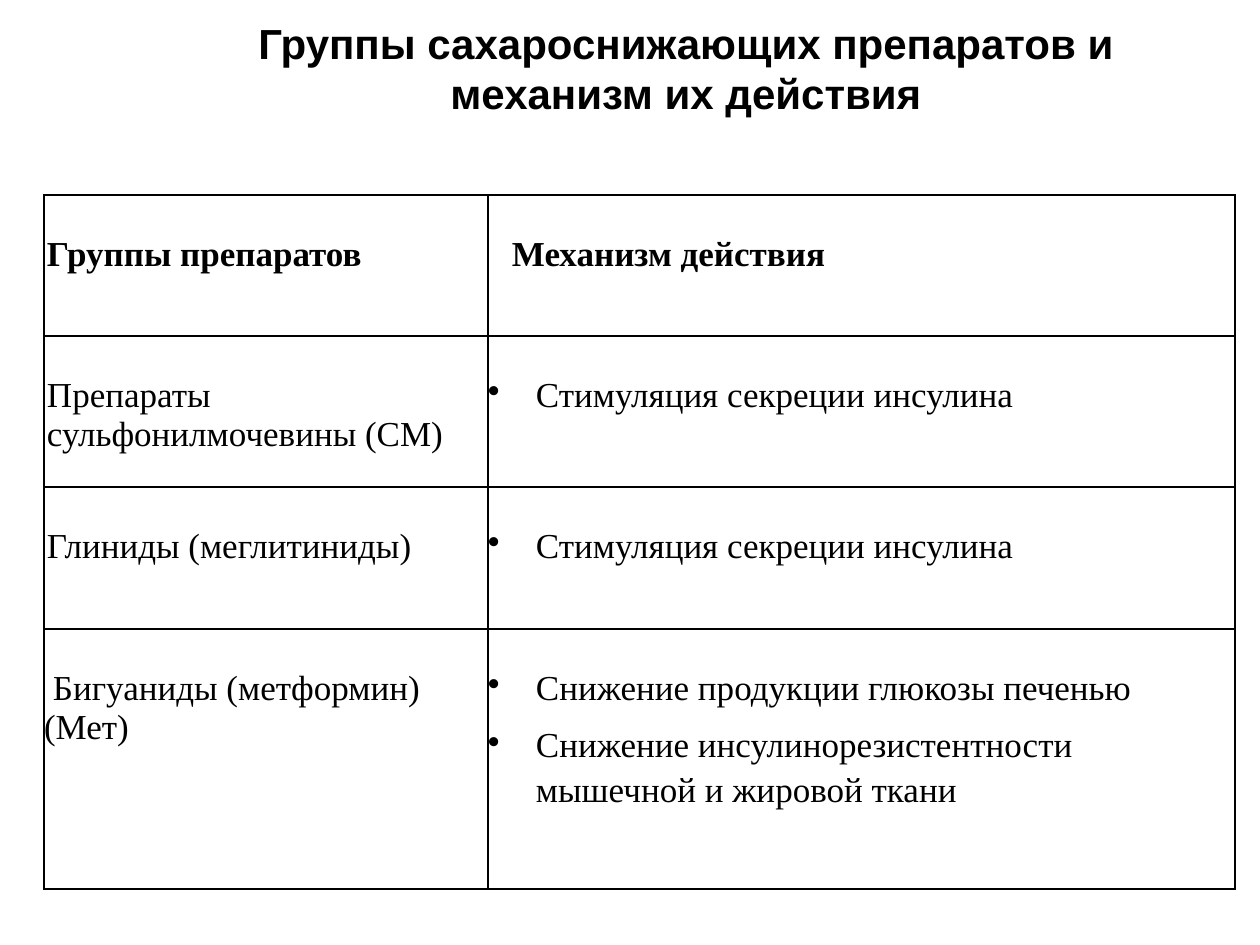
import pptx
import pptx.util
import pptx.dml.color
import pptx.enum.text
import pptx.oxml.ns
import lxml.etree

BLACK = pptx.dml.color.RGBColor(0, 0, 0)
TITLE = "Группы сахароснижающих препаратов и механизм их действия"
HEAD = [("Группы препаратов", 3, 0), ("Механизм действия", 24, 0)]
BODY = [
    ("Препараты сульфонилмочевины (СМ)", 3, 0, ["Стимуляция секреции инсулина"]),
    ("Глиниды (меглитиниды)", 3, 0, ["Стимуляция секреции инсулина"]),
    ("Бигуаниды (метформин)(Мет)", 0, 9, [
        "Снижение продукции глюкозы печенью",
        "Снижение инсулинорезистентности мышечной и жировой ткани",
    ]),
]
COLS = [444, 747]
ROWS = [141, 151, 142, 260]
LEFT, TOP = 44, 195
HANG = 48
GAP = {"line_spacing": 1.15, "space_before": pptx.util.Pt(7.4)}
CELL = {"name": "Times New Roman", "size": pptx.util.Pt(20), "bold": False}
BOLD = {**CELL, "bold": True}
HEADING = {"name": "Arial", "size": pptx.util.Pt(24), "bold": True}


def px(n):
    return round(n * 914400 / 126)


def apply(obj, vals):
    for key, val in vals.items():
        setattr(obj, key, val)


def add(parent, tag, **attrs):
    node = lxml.etree.SubElement(parent, pptx.oxml.ns.qn(tag))
    for key, val in attrs.items():
        node.set(key, str(val))
    return node


def write(para, text, font):
    run = para.add_run()
    run.text = text
    apply(run.font, font)
    run.font.color.rgb = BLACK


def indent(para, left, first):
    props = para._p.get_or_add_pPr()
    props.set("marL", str(px(left)))
    props.set("indent", str(px(first)))
    return props


def frame(cell):
    apply(cell, {"margin_left": 0, "margin_right": 0, "margin_bottom": 0,
                 "margin_top": px(40)})
    props = cell._tc.get_or_add_tcPr()
    for side in "LRTB":
        line = add(props, "a:ln" + side, w=pptx.util.Pt(1))
        add(add(line, "a:solidFill"), "a:srgbClr", val=BLACK)
    cell.fill.background()


def plain(cell, text, left, first, font):
    para = cell.text_frame.paragraphs[0]
    indent(para, left, first)
    write(para, text, font)


def points(cell, items):
    text = cell.text_frame
    for i, item in enumerate(items):
        para = text.add_paragraph() if i else text.paragraphs[0]
        if i:
            apply(para, GAP)
        add(indent(para, HANG, -HANG), "a:buChar", char="•")
        write(para, item, CELL)


def main():
    deck = pptx.Presentation()
    apply(deck, {"slide_width": px(1260), "slide_height": px(945)})
    slide = deck.slides.add_slide(deck.slide_layouts[6])

    shape = slide.shapes.add_table(len(ROWS), len(COLS), px(LEFT), px(TOP),
                                   px(sum(COLS)), px(sum(ROWS)))
    table = shape.table
    apply(table, {"first_row": False, "horz_banding": False})
    for col, width in zip(table.columns, COLS):
        col.width = px(width)
    for row, height in zip(table.rows, ROWS):
        row.height = px(height)
    for cell in table.iter_cells():
        frame(cell)
    for c, (text, left, first) in enumerate(HEAD):
        plain(table.cell(0, c), text, left, first, BOLD)
    for r, (group, left, first, items) in enumerate(BODY, 1):
        plain(table.cell(r, 0), group, left, first, CELL)
        points(table.cell(r, 1), items)

    box = slide.shapes.add_textbox(px(25), px(6), px(1171), px(159))
    text = box.text_frame
    apply(text, {"word_wrap": True, "margin_left": px(215), "margin_right": px(64),
                 "margin_top": px(11), "margin_bottom": 0,
                 "vertical_anchor": pptx.enum.text.MSO_ANCHOR.TOP})
    para = text.paragraphs[0]
    para.alignment = pptx.enum.text.PP_ALIGN.CENTER
    write(para, TITLE, HEADING)

    deck.save("out.pptx")


if __name__ == "__main__":
    main()
